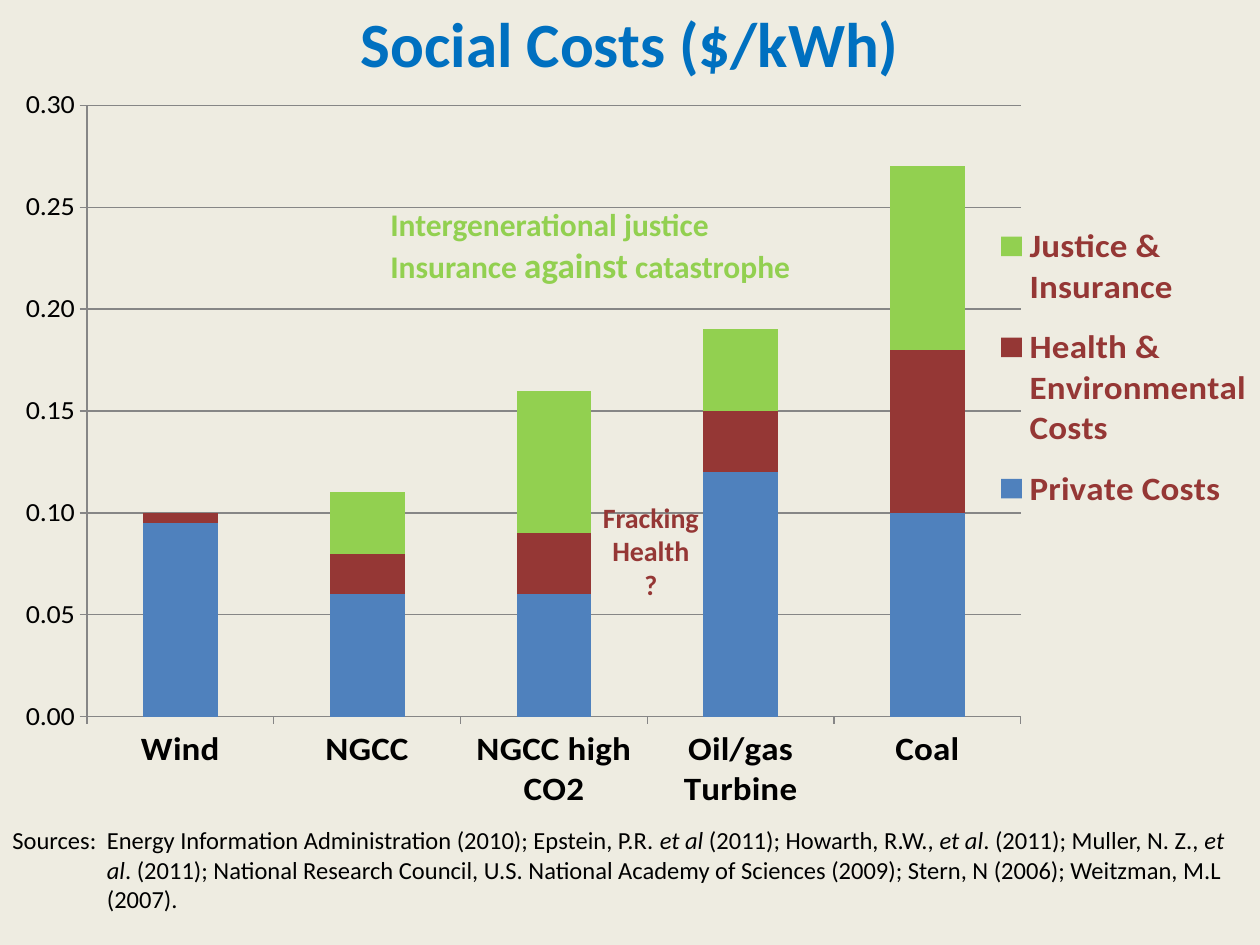
"""Builds a slide comparing the social costs of electricity sources."""
from dataclasses import dataclass

from lxml.etree import SubElement
from pptx import Presentation
from pptx.chart.data import CategoryChartData
from pptx.dml.color import RGBColor
from pptx.enum.chart import XL_CHART_TYPE, XL_LEGEND_POSITION, XL_TICK_MARK
from pptx.enum.text import MSO_ANCHOR, PP_ALIGN
from pptx.oxml import parse_xml
from pptx.oxml.ns import nsdecls, qn
from pptx.util import Inches, Pt


@dataclass(frozen=True)
class Theme:
    font: str = "Calibri"
    background: str = "EEECE1"
    title: str = "0070C0"
    text: str = "000000"
    line: str = "868686"
    private: str = "4F81BD"
    health: str = "953735"
    justice: str = "92D050"
    title_size: int = 36
    label_size: int = 20
    note_size: int = 18
    axis_size: int = 16
    source_size: int = 14


THEME = Theme()
CATEGORIES = ["Wind", "NGCC", "NGCC high CO2", "Oil/gas Turbine", "Coal"]
SERIES = [
    ("Private Costs", [0.095, 0.06, 0.06, 0.12, 0.1], THEME.private),
    ("Health & Environmental Costs", [0.005, 0.02, 0.03, 0.03, 0.08], THEME.health),
    ("Justice & Insurance", [0, 0.03, 0.07, 0.04, 0.09], THEME.justice),
]
SOURCES = [
    ("Sources:\tEnergy Information Administration (2010); Epstein, P.R. ", False),
    ("et al", True),
    (" (2011); Howarth, R.W., ", False),
    ("et al", True),
    (". (2011); Muller, N. Z", False),
    ("., et al", True),
    (". (2011); National Research Council, U.S. National Academy of Sciences (2009); "
     "Stern, N (2006); Weitzman, M.L (2007).", False),
]


def style_font(font, size, color, bold=False, italic=False):
    font.name = THEME.font
    font.size = Pt(size)
    font.color.rgb = RGBColor.from_string(color)
    font.bold = bold
    font.italic = italic


def add_text(slide, box, lines, color, bold=True, align=PP_ALIGN.LEFT,
             anchor=MSO_ANCHOR.TOP, wrap=True):
    """Add a text box whose lines are lists of (text, size, italic) runs."""
    shape = slide.shapes.add_textbox(*map(Inches, box))
    frame = shape.text_frame
    frame.word_wrap = wrap
    frame.vertical_anchor = anchor
    for index, runs in enumerate(lines):
        paragraph = frame.add_paragraph() if index else frame.paragraphs[0]
        paragraph.alignment = align
        for text, size, italic in runs:
            run = paragraph.add_run()
            run.text = text
            style_font(run.font, size, color, bold, italic)
    return shape


def set_hanging_indent(paragraph, indent):
    properties = paragraph._p.get_or_add_pPr()
    properties.set("marL", str(indent))
    properties.set("indent", str(-indent))


def set_layout(element, left, top, width, height, inner=False):
    """Place a chart part by fractions of the chart area."""
    for old in element.findall(qn("c:layout")):
        element.remove(old)
    layout = parse_xml(f"<c:layout {nsdecls('c')}><c:manualLayout/></c:layout>")
    values = [("layoutTarget", "inner")] if inner else []
    values += [("xMode", "edge"), ("yMode", "edge"),
               ("x", left), ("y", top), ("w", width), ("h", height)]
    for name, value in values:
        SubElement(layout[0], qn(f"c:{name}")).set("val", str(value))
    if inner:
        element.insert(0, layout)
    else:
        element.find(qn("c:legendPos")).addnext(layout)


def style_axis(axis, size, bold=False):
    axis.major_tick_mark = XL_TICK_MARK.OUTSIDE
    axis.minor_tick_mark = XL_TICK_MARK.NONE
    style_line(axis.format.line)
    style_font(axis.tick_labels.font, size, THEME.text, bold)


def style_line(line):
    line.color.rgb = RGBColor.from_string(THEME.line)
    line.width = Pt(0.75)


def add_cost_chart(slide, box):
    data = CategoryChartData(number_format="0.00")
    data.categories = CATEGORIES
    for name, values, _ in SERIES:
        data.add_series(name, values)
    chart = slide.shapes.add_chart(
        XL_CHART_TYPE.COLUMN_STACKED, *map(Inches, box), data).chart
    chart.has_title = False
    style_font(chart.font, 10, THEME.text)

    plot = chart.plots[0]
    plot.gap_width = 150
    plot.overlap = 100
    plot.vary_by_categories = False
    for series, (_, _, color) in zip(plot.series, SERIES):
        series.format.fill.solid()
        series.format.fill.fore_color.rgb = RGBColor.from_string(color)

    style_axis(chart.category_axis, THEME.label_size, bold=True)
    value_axis = chart.value_axis
    style_axis(value_axis, THEME.axis_size)
    value_axis.minimum_scale = 0
    value_axis.maximum_scale = 0.3
    value_axis.major_unit = 0.05
    value_axis.tick_labels.number_format = "0.00"
    value_axis.tick_labels.number_format_is_linked = False
    value_axis.has_major_gridlines = True
    style_line(value_axis.major_gridlines.format.line)

    chart.has_legend = True
    legend = chart.legend
    legend.position = XL_LEGEND_POSITION.RIGHT
    legend.include_in_layout = False
    style_font(legend.font, THEME.label_size, THEME.health, bold=True)
    set_layout(legend._element, 0.78, 0.18, 0.22, 0.48)
    set_layout(chart._chartSpace.chart.plotArea, 0.053, 0.031, 0.754, 0.907, inner=True)


def main():
    presentation = Presentation()
    presentation.slide_width = Inches(10)
    presentation.slide_height = Inches(7.5)
    slide = presentation.slides.add_slide(presentation.slide_layouts[6])
    slide.background.fill.solid()
    slide.background.fill.fore_color.rgb = RGBColor.from_string(THEME.background)

    add_text(slide, (0.25, 0, 9.5, 0.67),
             [[("Social Costs ($/kWh)", THEME.title_size, False)]],
             THEME.title, align=PP_ALIGN.CENTER, anchor=MSO_ANCHOR.MIDDLE)
    sources = add_text(slide, (0, 6.5, 10, 0.81),
                       [[(text, THEME.source_size, italic) for text, italic in SOURCES]],
                       THEME.text, bold=False)
    set_hanging_indent(sources.text_frame.paragraphs[0], Inches(0.75))
    add_cost_chart(slide, (0.17, 0.67, 9.83, 5.75))
    add_text(slide, (3, 1.58, 3.5, 0.74),
             [[("Intergenerational justice", THEME.note_size, False)],
              [("Insurance ", THEME.note_size, False),
               ("against", THEME.label_size, False),
               (" catastrophe", THEME.note_size, False)]], THEME.justice)
    add_text(slide, (4.67, 3.92, 0.99, 0.91),
             [[(word, THEME.axis_size, False)] for word in ("Fracking", "Health", "?")],
             THEME.health, align=PP_ALIGN.CENTER, wrap=False)
    presentation.save("out.pptx")


if __name__ == "__main__":
    main()
